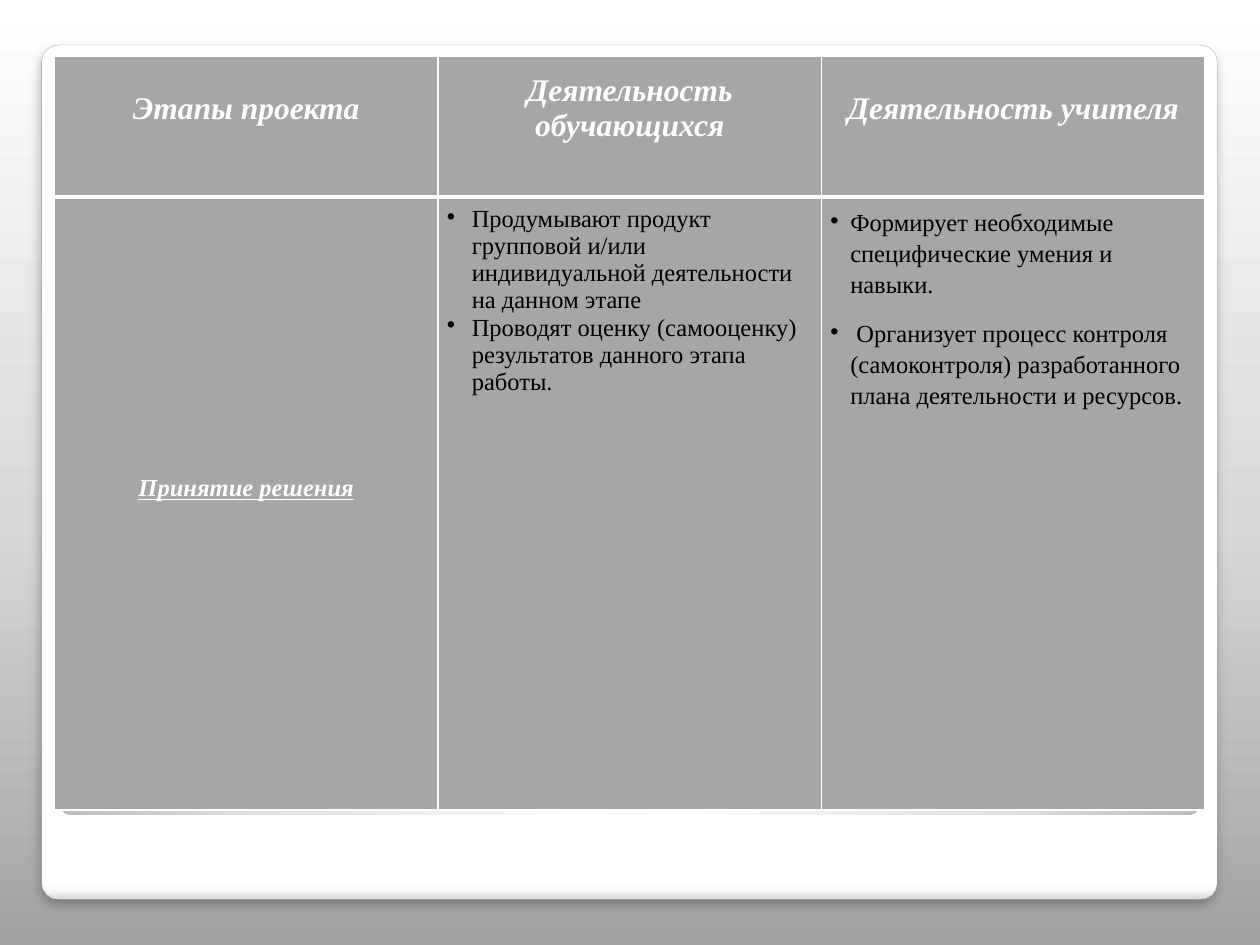
import pptx
import pptx.util
import pptx.oxml
import pptx.oxml.ns
from pptx.dml.color import RGBColor
from pptx.enum.shapes import MSO_SHAPE
from pptx.enum.text import MSO_ANCHOR, PP_ALIGN

Cm = pptx.util.Cm
Pt = pptx.util.Pt
NS = pptx.oxml.ns.nsdecls("a")
qn = pptx.oxml.ns.qn

FONT = "Times New Roman"
HEADERS = ["Этапы проекта", "Деятельность обучающихся", "Деятельность учителя"]
STAGE = "Принятие решения"
STUDENT_TASKS = [
    "Продумывают продукт групповой и/или индивидуальной деятельности на данном этапе",
    "Проводят оценку (самооценку) результатов данного этапа работы.",
]
TEACHER_TASKS = [
    "Формирует необходимые специфические умения и навыки.",
    " Организует процесс контроля (самоконтроля) разработанного плана деятельности и ресурсов.",
]
BACKDROP = [(0, "A2A2A2"), (45, "D8D8D8"), (100, "FFFFFF")]
FRAME = [(0, "FFFFFF"), (98, "FFFFFF"), (99, "F7F7F7"), (100, "DADADA")]
GLOW = [(0, "FFFFFF"), (55, "E1E1E1"), (100, "A2A2A2")]
LINEAR_UP = '<a:lin ang="16200000" scaled="0"/>'
LINEAR_DOWN = '<a:lin ang="5400000" scaled="0"/>'
CIRCLE = ('<a:path path="circle"><a:fillToRect l="50000" t="175000" '
          'r="50000" b="-75000"/></a:path>')
COLUMN_WIDTH = 7.73
ROW_HEIGHTS = [2.84, 12.36]


def color(value):
    return RGBColor.from_string(value)


def set_gradient(fill, holder, stops, direction):
    fill.solid()
    solid = holder.find(qn("a:solidFill"))
    marks = "".join(
        f'<a:gs pos="{position * 1000}"><a:srgbClr val="{value}"/></a:gs>'
        for position, value in stops)
    holder.replace(solid, pptx.oxml.parse_xml(
        f'<a:gradFill {NS} rotWithShape="1"><a:gsLst>{marks}</a:gsLst>{direction}</a:gradFill>'))


def add_panel(page, left, top, width, height, stops, direction):
    panel = page.shapes.add_shape(
        MSO_SHAPE.ROUNDED_RECTANGLE, Cm(left), Cm(top), Cm(width), Cm(height))
    panel.adjustments[0] = 0.02
    set_gradient(panel.fill, panel.element.spPr, stops, direction)
    panel.line.fill.background()
    panel.shadow.inherit = False
    return panel


def style_cell(cell, top, bottom):
    cell.fill.solid()
    cell.fill.fore_color.rgb = color("A6A6A6")
    properties = cell._tc.get_or_add_tcPr()
    borders = [("lnL", 1), ("lnR", 1), ("lnT", top), ("lnB", bottom)]
    for index, (side, width) in enumerate(borders):
        properties.insert(index, pptx.oxml.parse_xml(
            f'<a:{side} {NS} w="{Pt(width)}"><a:solidFill><a:srgbClr val="FFFFFF"/>'
            f'</a:solidFill></a:{side}>'))


def write_title(cell, text, size, bottom, underline=False):
    cell.vertical_anchor = MSO_ANCHOR.MIDDLE
    cell.margin_bottom = Cm(bottom)
    para = cell.text_frame.paragraphs[0]
    para.text = text
    para.alignment = PP_ALIGN.CENTER
    font = para.font
    font.name, font.size = FONT, Pt(size)
    font.bold = font.italic = True
    font.underline = underline
    font.color.rgb = color("FFFFFF")


def write_bullets(cell, items, indent, spacing, after):
    frame = cell.text_frame
    frame.text = "\n".join(items)
    for para in frame.paragraphs:
        para.line_spacing = spacing
        para.space_after = Pt(after)
        font = para.font
        font.name, font.size, font.bold = FONT, Pt(14), False
        font.color.rgb = color("000000")
        properties = para._p.get_or_add_pPr()
        properties.set("marL", str(Cm(indent)))
        properties.set("indent", str(-Cm(indent)))
        bullet = pptx.oxml.parse_xml(f'<a:buChar {NS} char="•"/>')
        properties.find(qn("a:defRPr")).addprevious(bullet)


deck = pptx.Presentation()
deck.slide_width, deck.slide_height = Cm(25.4), Cm(19.05)
page = deck.slides.add_slide(deck.slide_layouts[6])
backdrop = page.background.fill
backdrop.solid()
set_gradient(backdrop, page.element.cSld.find(qn("p:bg")).find(qn("p:bgPr")),
             BACKDROP, LINEAR_UP)

frame_panel = add_panel(page, 0.84, 0.91, 23.7, 17.22, FRAME, LINEAR_DOWN)
frame_panel.line.color.rgb = color("A4A4A4")
frame_panel.line.width = Pt(0.16)
frame_panel.element.spPr.find(qn("a:effectLst")).append(pptx.oxml.parse_xml(
    f'<a:outerShdw {NS} blurRad="{Pt(6)}" dist="{Pt(4)}" dir="5400000" rotWithShape="0">'
    '<a:srgbClr val="000000"><a:alpha val="25000"/></a:srgbClr></a:outerShdw>'))
add_panel(page, 1.17, 1.19, 23.06, 15.24, GLOW, CIRCLE)

table = page.shapes.add_table(
    2, 3, Cm(1.1), Cm(1.13), Cm(COLUMN_WIDTH * 3), Cm(sum(ROW_HEIGHTS))).table
for column in table.columns:
    column.width = Cm(COLUMN_WIDTH)
for row, height in zip(table.rows, ROW_HEIGHTS):
    row.height = Cm(height)

for cell, text in zip(table.rows[0].cells, HEADERS):
    style_cell(cell, 1, 3)
    write_title(cell, text, 18, 0.85)
stage, students, teacher = table.rows[1].cells
for cell in (stage, students, teacher):
    style_cell(cell, 3, 1)
    cell.margin_left = cell.margin_right = Cm(0.18)
    cell.margin_top = cell.margin_bottom = Cm(0.18)
write_title(stage, STAGE, 14, 0.78, underline=True)
write_bullets(students, STUDENT_TASKS, 0.5, 1.0, 0)
write_bullets(teacher, TEACHER_TASKS, 0.4, 1.15, 10)

deck.save("out.pptx")
